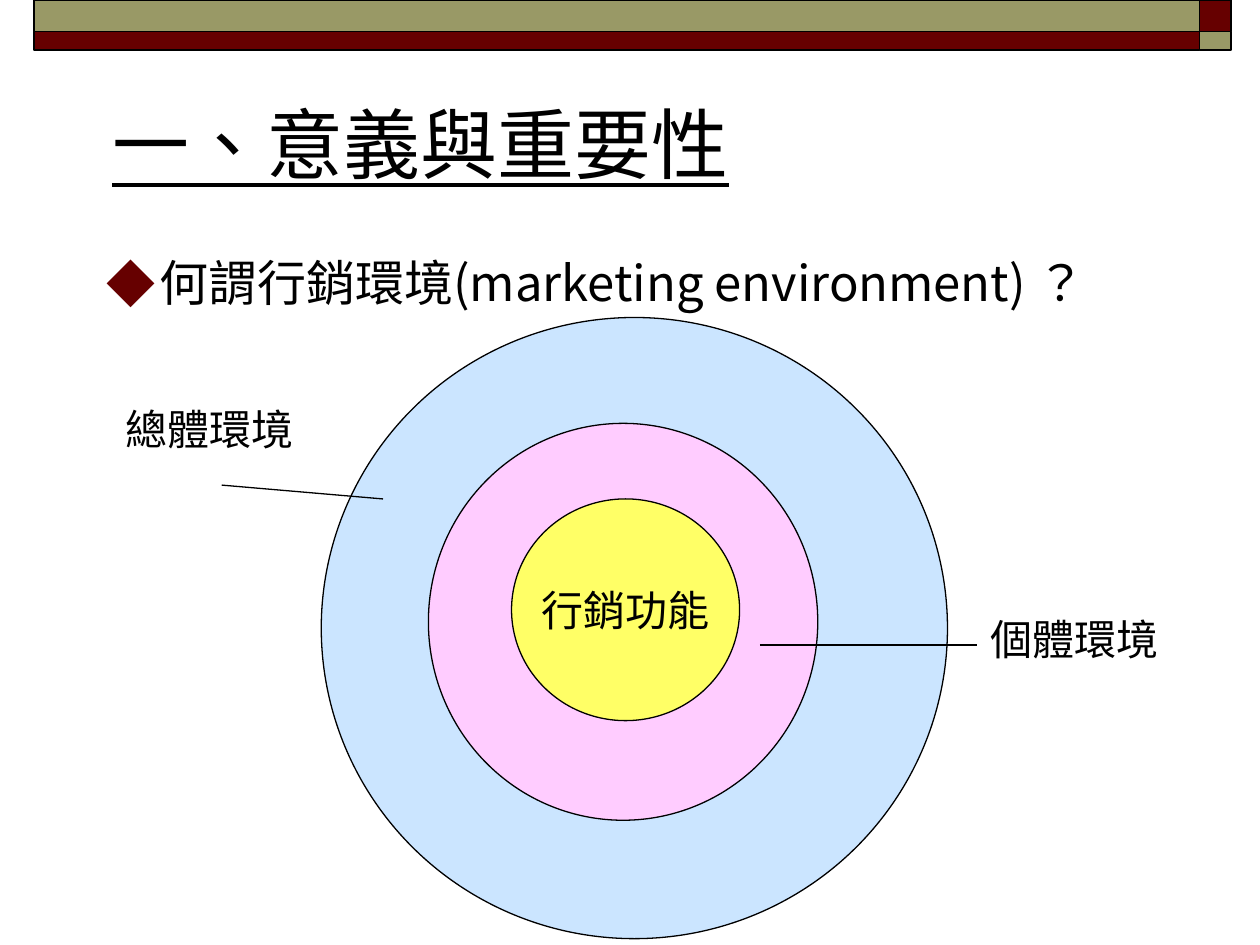
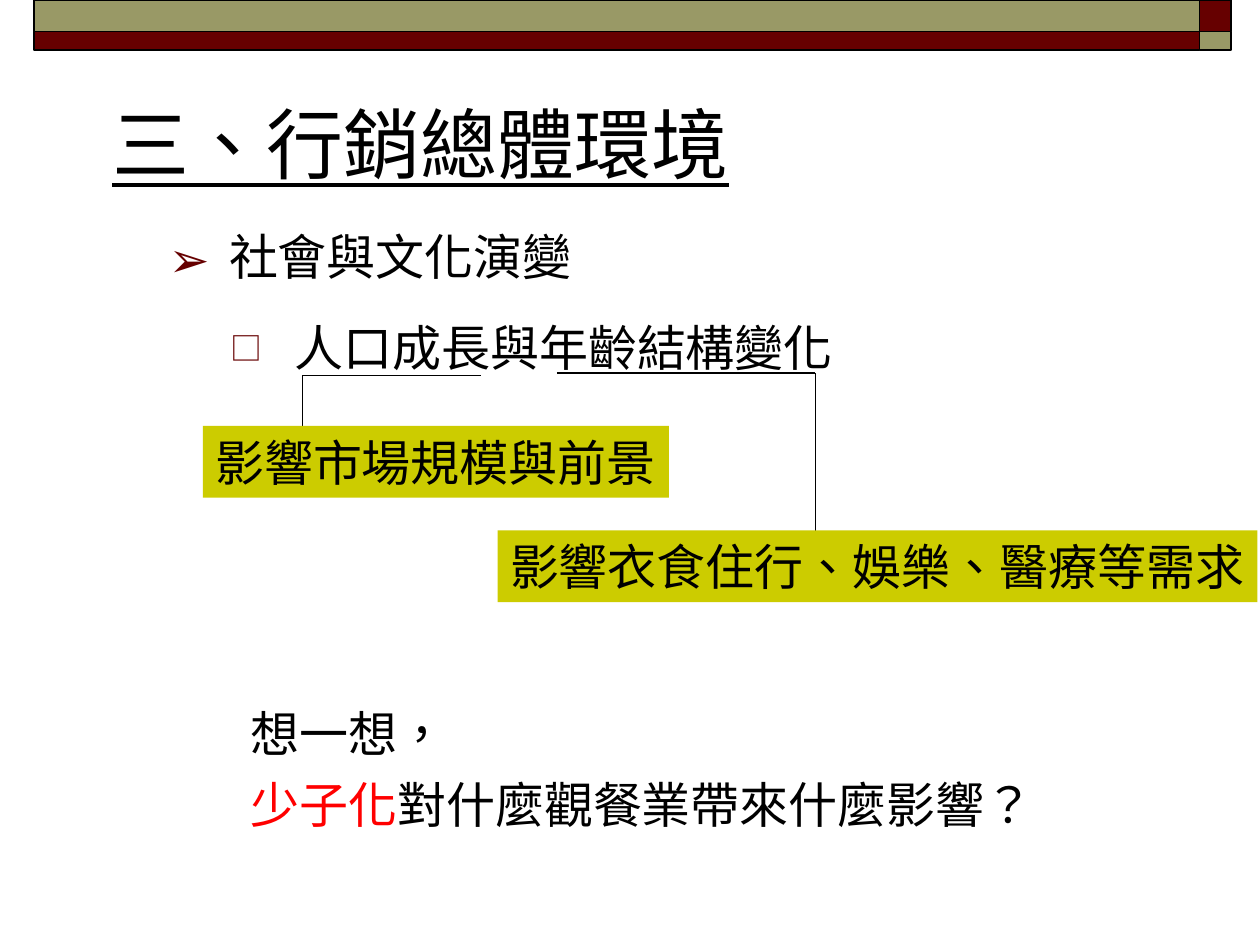
from typing import NamedTuple, Optional

from lxml.etree import SubElement
from pptx import Presentation
from pptx.dml.color import RGBColor
from pptx.enum.lang import MSO_LANGUAGE_ID
from pptx.enum.shapes import MSO_CONNECTOR, MSO_SHAPE
from pptx.enum.text import MSO_ANCHOR, MSO_AUTO_SIZE, PP_ALIGN
from pptx.oxml.ns import qn
from pptx.util import Emu, Pt

# Shared scale, colours and fonts
EMU_PER_PX = 9144  # 100 px to the inch
BLACK, MAROON, OLIVE = "000000", "660000", "999966"
SKY, PINK, YELLOW, MUSTARD, RED = "99CCFF", "FFCCFF", "FFFF66", "CCCC00", "FF0000"
SANS, SERIF, LABEL_FONT = "Noto Sans CJK SC", "Times New Roman", "Arial"


class Box(NamedTuple):
    left: int
    top: int
    width: int
    height: int


class Band(NamedTuple):
    box: Box
    color: str


class Ring(NamedTuple):
    box: Box
    color: str
    opacity: int = 100


class Line(NamedTuple):
    x1: int
    y1: int
    x2: int
    y2: int


class Label(NamedTuple):
    box: Box
    text: str


class Bullet(NamedTuple):
    char: str
    margin: int
    hanging: int
    percent: Optional[int] = None


TITLE_BOX = Box(79, 30, 862, 125)
BANDS = [
    Band(Box(952, 0, 25, 25), MAROON),
    Band(Box(27, 0, 925, 25), OLIVE),
    Band(Box(27, 25, 925, 15), MAROON),
    Band(Box(952, 25, 25, 15), OLIVE),
]


def px(length: int) -> Emu:
    return Emu(length * EMU_PER_PX)


def place(box: Box) -> list:
    return [px(length) for length in box]


def rgb(color: str) -> RGBColor:
    return RGBColor.from_string(color)


def add_span(para, text: str, *, size: int, font: str = SANS,
             color: str = BLACK, underline: bool = False):
    span = para.add_run()
    span.text = text
    span.font.size = Pt(size)
    span.font.name = font
    span.font.color.rgb = rgb(color)
    span.font.language_id = MSO_LANGUAGE_ID.TRADITIONAL_CHINESE
    if underline:
        span.font.underline = True
    SubElement(span.font._element, qn("a:ea")).set("typeface", SANS)
    return span


def add_shape(page, kind, box: Box, color: str, *, line_width: float = 0,
              opacity: int = 100):
    shape = page.shapes.add_shape(kind, *place(box))
    shape.shadow.inherit = False
    shape.fill.solid()
    shape.fill.fore_color.rgb = rgb(color)
    if opacity < 100:
        fill_color = shape._element.spPr.find(qn("a:solidFill"))[0]
        SubElement(fill_color, qn("a:alpha")).set("val", str(opacity * 1000))
    if line_width:
        shape.line.color.rgb = rgb(BLACK)
        shape.line.width = Pt(line_width)
    else:
        shape.line.fill.background()
    return shape


def add_line(page, line: Line) -> None:
    connector = page.shapes.add_connector(
        MSO_CONNECTOR.STRAIGHT, *[px(length) for length in line])
    connector.line.color.rgb = rgb(BLACK)
    connector.line.width = Pt(0.75)
    SubElement(connector._element.spPr, qn("a:effectLst"))


def add_text_box(page, box: Box, *, wrap: bool):
    frame = page.shapes.add_textbox(*place(box)).text_frame
    frame.word_wrap = wrap
    return frame


def set_bullet(para, bullet: Bullet) -> None:
    props = para._p.get_or_add_pPr()
    props.set("marL", str(px(bullet.margin)))
    props.set("indent", str(-px(bullet.hanging)))
    color = SubElement(props, qn("a:buClr"))
    SubElement(color, qn("a:srgbClr")).set("val", MAROON)
    if bullet.percent:
        SubElement(props, qn("a:buSzPct")).set("val", str(bullet.percent * 1000))
    SubElement(props, qn("a:buFont")).set("typeface", SANS)
    SubElement(props, qn("a:buChar")).set("char", bullet.char)


def write_bullet(para, text: str, bullet: Bullet) -> None:
    para.space_before = Pt(18)
    set_bullet(para, bullet)
    add_span(para, text, size=28)


def add_page(deck, title: str):
    """Add a page with the shared bands and underlined title."""
    page = deck.slides.add_slide(deck.slide_layouts[5])
    for band in BANDS:
        add_shape(page, MSO_SHAPE.RECTANGLE, band.box, band.color, line_width=1)
    holder = page.shapes.title
    holder.left, holder.top, holder.width, holder.height = place(TITLE_BOX)
    frame = holder.text_frame
    frame.auto_size = MSO_AUTO_SIZE.NONE
    frame.vertical_anchor = MSO_ANCHOR.BOTTOM
    para = frame.paragraphs[0]
    para.alignment = PP_ALIGN.LEFT
    add_span(para, title, size=44, underline=True)
    return page


def write_label(frame, text: str) -> None:
    frame.word_wrap = False
    para = frame.paragraphs[0]
    para.alignment = PP_ALIGN.CENTER
    add_span(para, text, size=24, font=SERIF)


def build_meaning_page(deck) -> None:
    page = add_page(deck, "一、意義與重要性")

    # Nested environments, from outside in
    rings = [
        Ring(Box(255, 252, 497, 493), SKY, 51),
        Ring(Box(340, 336, 309, 315), PINK),
        Ring(Box(406, 396, 181, 176), YELLOW),
    ]
    for ring in rings:
        core = add_shape(page, MSO_SHAPE.OVAL, ring.box, ring.color,
                         line_width=0.75, opacity=ring.opacity)
    core.text_frame.vertical_anchor = MSO_ANCHOR.MIDDLE
    write_label(core.text_frame, "行銷功能")

    # Callouts
    for line in (Line(304, 396, 176, 385), Line(603, 512, 775, 512)):
        add_line(page, line)
    for label in (Label(Box(90, 315, 153, 50), "總體環境"),
                  Label(Box(776, 482, 154, 50), "個體環境")):
        write_label(add_text_box(page, label.box, wrap=False), label.text)

    # Question
    question = add_text_box(page, Box(75, 186, 925, 102), wrap=True).paragraphs[0]
    question.line_spacing = 1.2
    write_bullet(question, "何謂行銷環境(marketing environment) ？", Bullet("◆", 42, 42))


def build_macro_page(deck) -> None:
    page = add_page(deck, "三、行銷總體環境")

    # Topic and subtopic
    body = add_text_box(page, Box(73, 175, 900, 148), wrap=True)
    write_bullet(body.paragraphs[0], "社會與文化演變", Bullet("➢", 99, 48))
    write_bullet(body.add_paragraph(), "人口成長與年齡結構變化",
                 Bullet("□", 151, 51, 65))

    # Brackets leading to the effects
    for line in (Line(240, 298, 382, 298), Line(240, 298, 240, 346),
                 Line(442, 296, 647, 296), Line(647, 296, 647, 422)):
        add_line(page, line)
    for effect in (Label(Box(161, 338, 370, 57), "影響市場規模與前景"),
                   Label(Box(395, 421, 603, 57), "影響衣食住行、娛樂、醫療等需求")):
        shape = add_shape(page, MSO_SHAPE.RECTANGLE, effect.box, MUSTARD)
        frame = shape.text_frame
        frame.word_wrap = False
        frame.vertical_anchor = MSO_ANCHOR.MIDDLE
        para = frame.paragraphs[0]
        para.alignment = PP_ALIGN.LEFT
        add_span(para, effect.text, size=28, font=LABEL_FONT)

    # Question to think about
    frame = add_text_box(page, Box(189, 544, 642, 122), wrap=False)
    prompt, question = frame.paragraphs[0], frame.add_paragraph()
    prompt.line_spacing = question.line_spacing = 1.2
    add_span(prompt, "想一想，", size=28, font=LABEL_FONT)
    add_span(question, "少子化", size=28, font=LABEL_FONT, color=RED)
    add_span(question, "對什麼觀餐業帶來什麼影響？", size=28, font=LABEL_FONT)


def main() -> None:
    deck = Presentation()
    deck.slide_width, deck.slide_height = px(1000), px(750)
    build_meaning_page(deck)
    build_macro_page(deck)
    deck.save("out.pptx")


if __name__ == "__main__":
    main()
